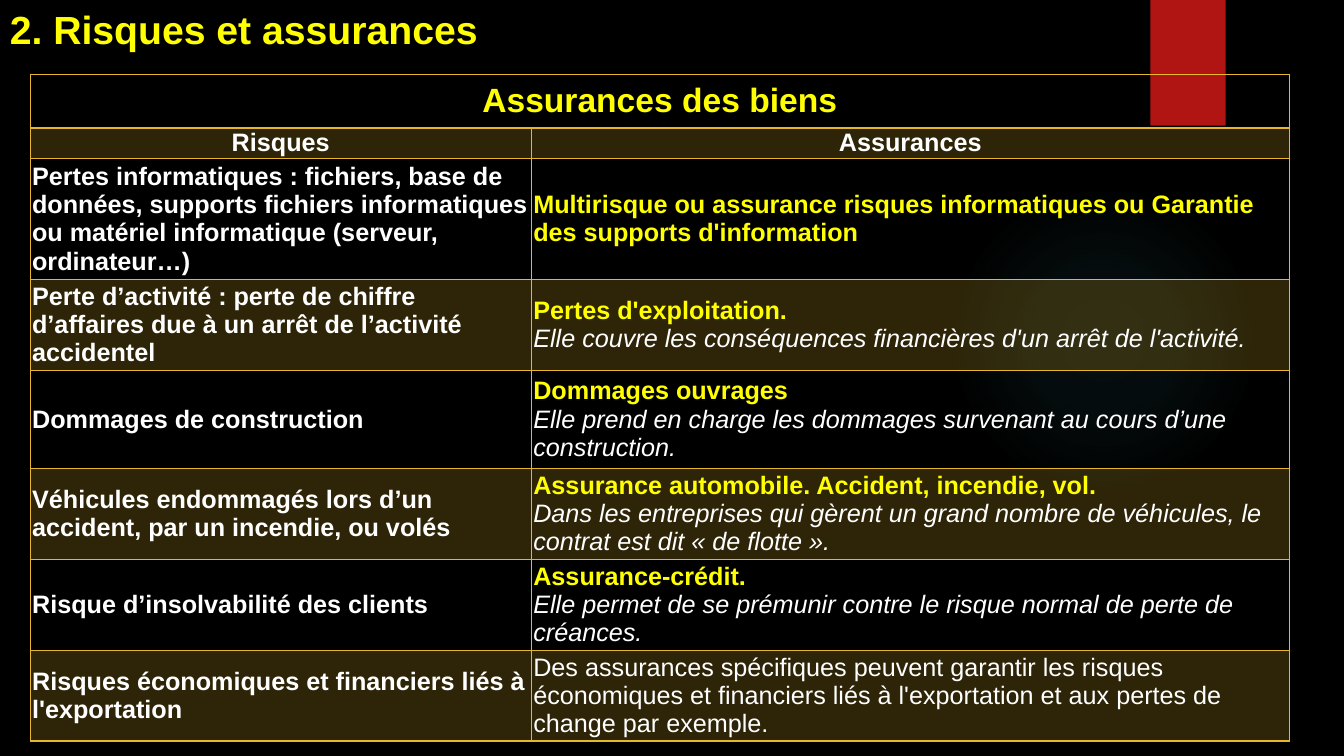
from lxml import etree
from pptx import Presentation
from pptx.dml.color import RGBColor
from pptx.enum.shapes import MSO_SHAPE
from pptx.enum.text import MSO_ANCHOR, PP_ALIGN
from pptx.oxml import parse_xml
from pptx.oxml.ns import nsdecls, qn
from pptx.util import Cm, Pt

RECTANGLE, OVAL = MSO_SHAPE.RECTANGLE, MSO_SHAPE.OVAL
TOP, MIDDLE = MSO_ANCHOR.TOP, MSO_ANCHOR.MIDDLE
LEFT, CENTER = PP_ALIGN.LEFT, PP_ALIGN.CENTER

FONT = "Arial"
BLACK, WHITE, YELLOW = "000000", "FFFFFF", "FFFF00"
GOLD, RED, TEAL = "E6B729", "B01513", "50B9C1"

# Content: risk, insurance name, explanation
TITLE = "2. Risques et assurances"
TABLE_TITLE = "Assurances des biens"
HEADINGS = ("Risques", "Assurances")
RISKS = [
    ("Pertes informatiques : fichiers, base de données, supports fichiers "
     "informatiques ou matériel informatique (serveur, ordinateur…)",
     "Multirisque ou assurance risques informatiques ou Garantie des supports d'information", ""),
    ("Perte d’activité : perte de chiffre d’affaires due à un arrêt de l’activité accidentel",
     "Pertes d'exploitation.",
     "Elle couvre les conséquences financières d'un arrêt de l'activité."),
    ("Dommages de construction",
     "Dommages ouvrages",
     "Elle prend en charge les dommages survenant au cours d’une construction."),
    ("Véhicules endommagés lors d’un accident, par un incendie, ou volés",
     "Assurance automobile. Accident, incendie, vol.",
     "Dans les entreprises qui gèrent un grand nombre de véhicules, "
     "le contrat est dit « de flotte »."),
    ("Risque d’insolvabilité des clients",
     "Assurance-crédit.",
     "Elle permet de se prémunir contre le risque normal de perte de créances."),
    ("Risques économiques et financiers liés à l'exportation",
     "",
     "Des assurances spécifiques peuvent garantir les risques économiques et "
     "financiers liés à l'exportation et aux pertes de change par exemple."),
]
COLUMN_WIDTHS = (12.63, 19.1)
ROW_HEIGHTS = (1.36, 0.76, 3.05, 2.29, 2.47, 2.29, 2.29, 2.29)
GLOW_STOPS = ((0, 7), (36, 6), (69, 0), (100, 0))


def color(value):
    return RGBColor.from_string(value)


def style(paragraph, size, value, bold=True, italic=False, align=LEFT):
    paragraph.alignment = align
    font = paragraph.font
    font.name, font.size, font.bold, font.italic = FONT, Pt(size), bold, italic
    font.color.rgb = color(value)


def add_plain_shape(kind, left, top, width, height, fill):
    shape = slide.shapes.add_shape(kind, Cm(left), Cm(top), Cm(width), Cm(height))
    shape.shadow.inherit = False
    shape.fill.solid()
    shape.fill.fore_color.rgb = color(fill)
    shape.line.fill.background()
    return shape


def set_borders(cell, top=1, bottom=1):
    widths = {"lnL": 1, "lnR": 1, "lnT": top, "lnB": bottom}
    for position, (side, points) in enumerate(widths.items()):
        border = parse_xml(
            f'<a:{side} {nsdecls("a")} w="{Pt(points)}"><a:solidFill>'
            f'<a:srgbClr val="{GOLD}"/></a:solidFill></a:{side}>')
        cell._tc.get_or_add_tcPr().insert(position, border)


def format_cell(cell, tinted, anchor=MIDDLE):
    cell.margin_left = cell.margin_right = Cm(0.05)
    cell.margin_top = cell.margin_bottom = 0
    cell.vertical_anchor = anchor
    if tinted:
        cell.fill.solid()
        cell.fill.fore_color.rgb = color(GOLD)
        fill_color = cell._tc.tcPr.find(".//" + qn("a:srgbClr"))
        etree.SubElement(fill_color, qn("a:alpha"), val="20000")
    else:
        cell.fill.background()


def write_cell(cell, lines):
    """Each line is its text followed by the style arguments."""
    frame = cell.text_frame
    for index, (text, options) in enumerate(lines):
        paragraph = frame.add_paragraph() if index else frame.paragraphs[0]
        paragraph.text = text
        style(paragraph, **options)


presentation = Presentation()
presentation.slide_width, presentation.slide_height = Cm(33.87), Cm(19.05)
slide = presentation.slides.add_slide(presentation.slide_layouts[6])
slide.background.fill.solid()
slide.background.fill.fore_color.rgb = color(BLACK)

# Background glow and red ribbon
glow = add_plain_shape(OVAL, 23.9, 4.65, 7.82, 7.82, TEAL)
stops = "".join(
    f'<a:gs pos="{position * 1000}"><a:srgbClr val="{TEAL}">'
    f'<a:alpha val="{alpha * 1000}"/></a:srgbClr></a:gs>' for position, alpha in GLOW_STOPS)
gradient = parse_xml(
    f'<a:gradFill {nsdecls("a")}><a:gsLst>{stops}</a:gsLst><a:path path="circle">'
    '<a:fillToRect l="50000" t="50000" r="50000" b="50000"/></a:path></a:gradFill>')
properties = glow._element.spPr
properties.replace(properties.find(qn("a:solidFill")), gradient)
add_plain_shape(RECTANGLE, 28.99, 0, 1.9, 3.17, RED)

# Title
title = slide.shapes.add_textbox(0, 0, Cm(16.23), Cm(1.45))
title.text_frame.word_wrap = True
title.text_frame.text = TITLE
style(title.text_frame.paragraphs[0], 28, YELLOW)

# Table
table = slide.shapes.add_table(
    len(ROW_HEIGHTS), len(COLUMN_WIDTHS), Cm(0.76), Cm(1.87),
    Cm(sum(COLUMN_WIDTHS)), Cm(sum(ROW_HEIGHTS))).table
table.first_row = table.horz_banding = False
for column, width in zip(table.columns, COLUMN_WIDTHS):
    column.width = Cm(width)
for index, (row, height) in enumerate(zip(table.rows, ROW_HEIGHTS)):
    row.height = Cm(height)
    for cell in row.cells:
        format_cell(cell, tinted=index % 2 == 1, anchor=TOP if index == 1 else MIDDLE)
        set_borders(cell, top=2 if index == 1 else 1, bottom=2 if index == 0 else 1)

table.cell(0, 0).merge(table.cell(0, 1))
write_cell(table.cell(0, 0), [(TABLE_TITLE, dict(size=24, value=YELLOW, align=CENTER))])
for column, heading in enumerate(HEADINGS):
    write_cell(table.cell(1, column), [(heading, dict(size=18, value=WHITE, align=CENTER))])
for row, (risk, insurance, explanation) in enumerate(RISKS, start=2):
    write_cell(table.cell(row, 0), [(risk, dict(size=18, value=WHITE))])
    lines = [(insurance, dict(size=18, value=YELLOW)),
             (explanation, dict(size=18, value=WHITE, bold=False, italic=bool(insurance)))]
    write_cell(table.cell(row, 1), [line for line in lines if line[0]])

presentation.save("out.pptx")
